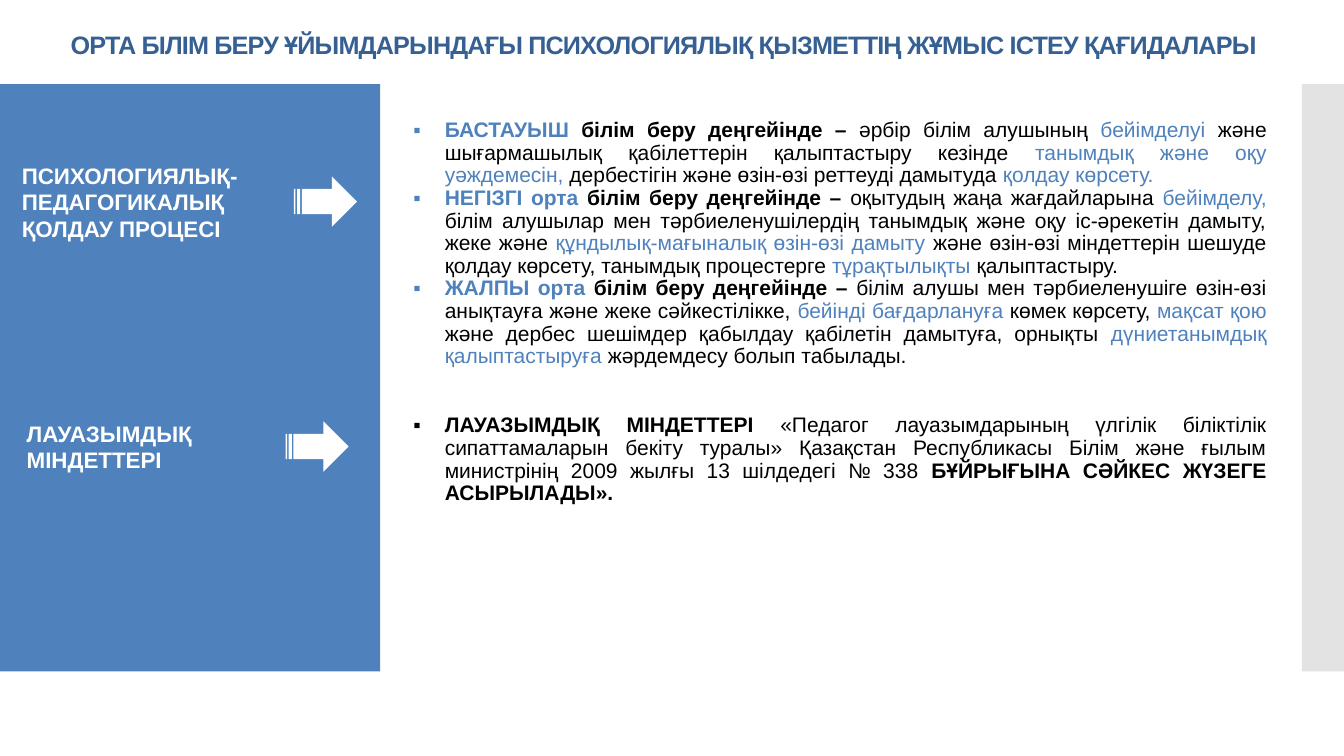
from dataclasses import dataclass

from lxml.etree import SubElement
from pptx import Presentation
from pptx.dml.color import RGBColor
from pptx.enum.shapes import MSO_SHAPE as Shape
from pptx.enum.text import MSO_ANCHOR as Anchor, MSO_AUTO_SIZE as AutoSize, PP_ALIGN as Align
from pptx.oxml.ns import qn
from pptx.util import Pt


@dataclass(frozen=True)
class Theme:
    font: str = "Arial"
    accent: str = "4F81BD"
    title: str = "376092"
    side: str = "C8C8C8"
    text: str = "000000"
    white: str = "FFFFFF"
    title_size: float = 18
    label_size: float = 16
    body_size: float = 15
    body_spacing: float = 0.97
    indent: float = 22.5


class SlideBuilder:
    def __init__(self, slide, theme):
        self.slide = slide
        self.theme = theme

    def style(self, run, size, color, bold):
        f = run.font
        f.name, f.size, f.bold = self.theme.font, Pt(size), bold
        f.color.rgb = RGBColor.from_string(color)

    def title(self, text, x, y, w, h):
        s = self.slide.shapes.title
        s.left, s.top, s.width, s.height = Pt(x), Pt(y), Pt(w), Pt(h)
        tf = s.text_frame
        tf.text = text
        tf.auto_size, tf.vertical_anchor = AutoSize.NONE, Anchor.MIDDLE
        tf.margin_left = tf.margin_right = tf.margin_bottom = 0
        tf.margin_top = Pt(1)
        p = tf.paragraphs[0]
        p.alignment, p.space_before = Align.CENTER, Pt(1)
        r = p.runs[0]
        self.style(r, self.theme.title_size, self.theme.title, True)
        r.font._element.set("spc", "-60")

    def block(self, kind, x, y, w, h, color, alpha=None):
        s = self.slide.shapes.add_shape(kind, Pt(x), Pt(y), Pt(w), Pt(h))
        s.shadow.inherit = False
        s.line.fill.background()
        s.fill.solid()
        s.fill.fore_color.rgb = RGBColor.from_string(color)
        if alpha is not None:
            clr = s._element.spPr.find(f"{qn('a:solidFill')}/{qn('a:srgbClr')}")
            SubElement(clr, qn("a:alpha"), val=str(alpha * 1000))
        return s

    def label(self, text, x, y, w, h):
        tf = self.block(Shape.RECTANGLE, x, y, w, h, self.theme.accent).text_frame
        tf.text = text
        tf.word_wrap, tf.vertical_anchor = True, Anchor.MIDDLE
        p = tf.paragraphs[0]
        p.alignment = Align.LEFT
        self.style(p.runs[0], self.theme.label_size, self.theme.white, True)

    def bullet(self, p, parts):
        """Fill a paragraph from (text, colour, bold) parts."""
        t = self.theme
        p.alignment, p.line_spacing = Align.JUSTIFY, t.body_spacing
        pPr = p._p.get_or_add_pPr()
        pPr.set("marL", str(Pt(t.indent)))
        pPr.set("indent", str(-Pt(t.indent)))
        SubElement(pPr, qn("a:buFont"), typeface=t.font)
        SubElement(pPr, qn("a:buChar"), char="▪")
        for text, color, bold in parts:
            r = p.add_run()
            r.text = text
            self.style(r, t.body_size, color, bold)

    def table(self, rows, heights, x, y, w):
        """Draw one column, each row a list of bullets."""
        frame = self.slide.shapes.add_table(len(heights), 1, Pt(x), Pt(y), Pt(w), Pt(sum(heights)))
        table = frame.table
        table.first_row = table.horz_banding = False
        table.columns[0].width = Pt(w)
        for i, (bullets, height) in enumerate(zip(rows, heights)):
            table.rows[i].height = Pt(height)
            cell = table.cell(i, 0)
            cell.fill.solid()
            cell.fill.fore_color.rgb = RGBColor.from_string(self.theme.white)
            cell.vertical_anchor = Anchor.MIDDLE
            tf = cell.text_frame
            for n, parts in enumerate(bullets):
                self.bullet(tf.add_paragraph() if n else tf.paragraphs[0], parts)
        return table


THEME = Theme()
BLUE, BLACK = THEME.accent, THEME.text


def level(name, *texts):
    """Bold heading, then plain texts alternating black and blue."""
    parts = [(name, BLUE, True), ("білім беру деңгейінде – ", BLACK, True)]
    return parts + [(text, (BLACK, BLUE)[i % 2], False) for i, text in enumerate(texts)]


SUPPORT = [
    level("БАСТАУЫШ ",
          "әрбір білім алушының ", "бейімделуі ",
          "және шығармашылық қабілеттерін қалыптастыру кезінде ",
          "танымдық және оқу уәждемесін, ",
          "дербестігін және өзін-өзі реттеуді дамытуда ", "қолдау көрсету. "),
    level("НЕГІЗГІ орта ",
          "оқытудың жаңа жағдайларына ", "бейімделу, ",
          "білім алушылар мен тәрбиеленушілердің танымдық және оқу іс-әрекетін дамыту, жеке және ",
          "құндылық-мағыналық өзін-өзі дамыту ",
          "және өзін-өзі міндеттерін шешуде қолдау көрсету, танымдық процестерге ",
          "тұрақтылықты", " қалыптастыру. "),
    level("ЖАЛПЫ орта ",
          "білім алушы мен тәрбиеленушіге өзін-өзі анықтауға және жеке сәйкестілікке, ",
          "бейінді бағдарлануға ", "көмек көрсету, ", "мақсат қою ",
          "және дербес шешімдер қабылдау қабілетін дамытуға, орнықты ",
          "дүниетанымдық қалыптастыруға ", "жәрдемдесу болып табылады. "),
]
DUTIES = [[
    ("ЛАУАЗЫМДЫҚ МІНДЕТТЕРІ ", BLACK, True),
    ("«Педагог лауазымдарының үлгілік біліктілік сипаттамаларын бекіту туралы» "
     "Қазақстан Республикасы Білім және ғылым министрінің 2009 жылғы 13 шілдедегі № 338 ",
     BLACK, False),
    ("БҰЙРЫҒЫНА СӘЙКЕС ЖҮЗЕГЕ АСЫРЫЛАДЫ».", BLACK, True),
]]


def main():
    prs = Presentation()
    prs.slide_width, prs.slide_height = Pt(960), Pt(540)
    slide = SlideBuilder(prs.slides.add_slide(prs.slide_layouts[5]), THEME)

    slide.title("ОРТА БІЛІМ БЕРУ ҰЙЫМДАРЫНДАҒЫ ПСИХОЛОГИЯЛЫҚ ҚЫЗМЕТТІҢ ЖҰМЫС ІСТЕУ ҚАҒИДАЛАРЫ",
                0, 19.5, 948, 23)
    slide.block(Shape.RECTANGLE, 0, 60, 271.5, 419.5, BLUE)
    slide.block(Shape.RECTANGLE, 930, 60, 30, 419.5, THEME.side, alpha=50)

    table = slide.table([SUPPORT, DUTIES, []], [214.5, 111, 93.5], 288, 58.5, 624)
    table.cell(0, 0).margin_top = Pt(20.5)

    slide.label("ПСИХОЛОГИЯЛЫҚ-ПЕДАГОГИКАЛЫҚ ҚОЛДАУ ПРОЦЕСІ", 8.5, 83, 198, 122.5)
    slide.label("ЛАУАЗЫМДЫҚ МІНДЕТТЕРІ", 12, 301, 162, 36)
    for x, y in ((210, 126), (204, 301)):
        slide.block(Shape.STRIPED_RIGHT_ARROW, x, y, 45, 36, THEME.white)

    prs.save("out.pptx")


if __name__ == "__main__":
    main()
